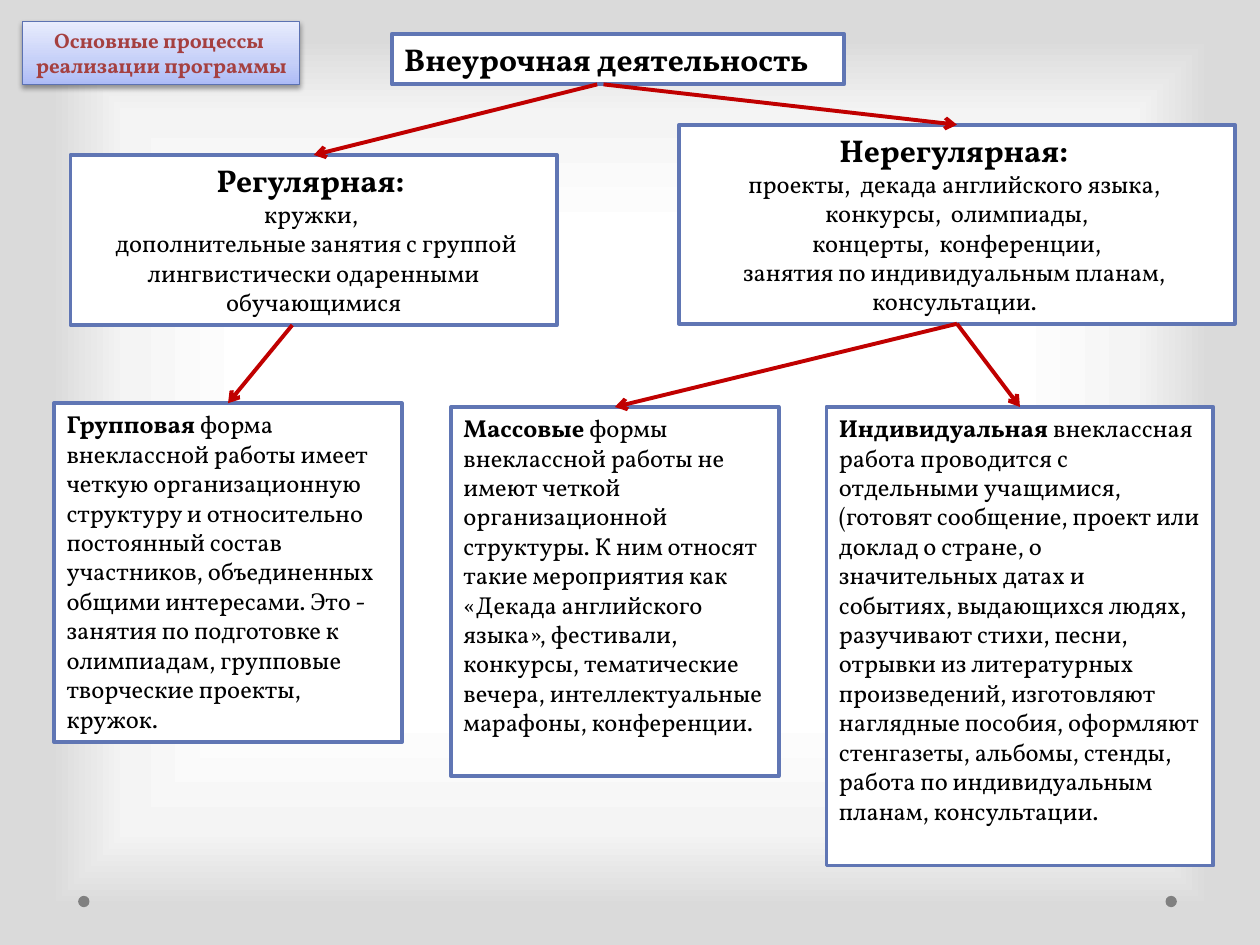
from pptx import Presentation
from pptx import util as u
from pptx.dml.color import RGBColor
from pptx.enum import shapes, text
from pptx.oxml import parse_xml
from pptx.oxml.ns import nsdecls, qn

# Grid of 100 columns and 75 rows
WIDTH, HEIGHT = u.Inches(10), u.Inches(7.5)
COLUMN, ROW = WIDTH / 100, HEIGHT / 75

FONT = "Vollkorn"
BLACK = RGBColor(0, 0, 0)
WHITE = RGBColor(255, 255, 255)
SILVER = RGBColor(0xF4, 0xF4, 0xF4)
ASH = RGBColor(0xDA, 0xDA, 0xDA)
GREY = RGBColor(0x80, 0x80, 0x80)
BLUE = RGBColor(0x60, 0x76, 0xB4)
LABEL_LINE = RGBColor(0x5C, 0x72, 0xB2)
LABEL_DARK = RGBColor(0xAD, 0xBB, 0xF6)
LABEL_MID = RGBColor(0xC5, 0xCF, 0xF8)
LABEL_LIGHT = RGBColor(0xE8, 0xEC, 0xFD)
LABEL_TEXT = RGBColor(0xA5, 0x40, 0x40)
RED = RGBColor(0xC0, 0, 0)

TOP, BOTTOM = 0, 2
LEFT, CENTER = text.PP_ALIGN.LEFT, text.PP_ALIGN.CENTER

# Each paragraph is a list of (wording, size, bold)
TITLE = [[("Внеурочная деятельность", 18, True)]]
LABEL = [[("Основные процессы ", 12, True)], [("реализации программы", 12, True)]]
REGULAR = [
    [("Регулярная: ", 18, True)],
    [("кружки, ", 14, False)],
    [(" дополнительные занятия с группой лингвистически одаренными обучающимися",
      14, False)],
]
IRREGULAR = [[("Нерегулярная: ", 18, True)]] + [
    [(line, 14, False)] for line in (
        "проекты,  декада английского языка, ",
        "конкурсы,  олимпиады,",
        " концерты,  конференции, ",
        "занятия по индивидуальным планам, ",
        "консультации. ",
    )
]
GROUP = [[
    ("Групповая", 14, True),
    (" форма внеклассной работы имеет четкую организационную структуру и "
     "относительно постоянный состав участников, объединенных общими "
     "интересами. Это - занятия по подготовке к олимпиадам, групповые "
     "творческие проекты, кружок.", 14, False),
]]
MASS = [[
    ("Массовые", 14, True),
    (" формы внеклассной работы не имеют четкой организационной структуры. "
     "К ним относят такие мероприятия как «Декада английского языка», "
     "фестивали, конкурсы, тематические вечера, интеллектуальные марафоны, "
     "конференции.", 14, False),
]]
INDIVIDUAL = [[
    ("Индивидуальная ", 14, True),
    ("внеклассная работа проводится с отдельными учащимися,(готовят "
     "сообщение, проект или доклад о стране, о значительных датах и событиях, "
     "выдающихся людях, разучивают стихи, песни, отрывки из литературных "
     "произведений, изготовляют наглядные пособия, оформляют стенгазеты, "
     "альбомы, стенды, работа по индивидуальным планам, консультации.",
     14, False),
]]


def set_gradient(fill, element, stops, direction):
    """Fill with (percent, colour) stops along an XML direction."""
    fill.gradient()
    marks = "".join(
        f'<a:gs pos="{percent * 1000}"><a:srgbClr val="{color}"/></a:gs>'
        for percent, color in stops)
    gradient = element.find(".//" + qn("a:gradFill"))
    gradient.getparent().replace(gradient, parse_xml(
        f'<a:gradFill {nsdecls("a")} rotWithShape="1">'
        f"<a:gsLst>{marks}</a:gsLst>{direction}</a:gradFill>"))


def add_shape(page, kind, column, row, columns, rows, color):
    shape = page.shapes.add_shape(
        kind, round(column * COLUMN), round(row * ROW),
        round(columns * COLUMN), round(rows * ROW))
    shape.shadow.inherit = False
    shape.fill.solid()
    shape.fill.fore_color.rgb = color
    return shape


def add_dot(page, column):
    dot = add_shape(page, shapes.MSO_SHAPE.OVAL, column, 71.1, 0.9, 0.9, GREY)
    dot.line.fill.background()


def add_box(page, place, paragraphs, align=LEFT, color=BLACK):
    box = add_shape(page, shapes.MSO_SHAPE.RECTANGLE, *place, WHITE)
    box.line.color.rgb = BLUE
    box.line.width = u.Pt(2.25)
    frame = box.text_frame
    frame.word_wrap = True
    frame.vertical_anchor = text.MSO_ANCHOR.TOP
    for index, spans in enumerate(paragraphs):
        para = frame.add_paragraph() if index else frame.paragraphs[0]
        para.alignment = align
        for wording, size, bold in spans:
            span = para.add_run()
            span.text = wording
            span.font.name = FONT
            span.font.size = u.Pt(size)
            span.font.bold = bold
            span.font.color.rgb = color
    return box


def add_label(page):
    label = add_box(page, (1.8, 1.7, 22, 5), LABEL, CENTER, LABEL_TEXT)
    label.line.color.rgb = LABEL_LINE
    label.line.width = u.Pt(0.75)
    set_gradient(label.fill, label._element.spPr,
                 [(0, LABEL_DARK), (35, LABEL_MID), (100, LABEL_LIGHT)],
                 '<a:lin ang="16200000" scaled="1"/>')
    # Soft shadow straight below
    label._element.spPr.find(qn("a:effectLst")).append(parse_xml(
        f'<a:outerShdw {nsdecls("a")} blurRad="{u.Pt(3.1)}" dist="{u.Pt(1.6)}" '
        'dir="5400000" rotWithShape="0"><a:srgbClr val="000000">'
        '<a:alpha val="38000"/></a:srgbClr></a:outerShdw>'))


def add_arrow(page, source, target, start=None):
    """Join two boxes; start is a column when not the source's middle."""
    arrow = page.shapes.add_connector(
        shapes.MSO_CONNECTOR.STRAIGHT,
        round((start or 0) * COLUMN), source.top + source.height,
        target.left + target.width // 2, target.top)
    if start is None:
        arrow.begin_connect(source, BOTTOM)
    arrow.end_connect(target, TOP)
    arrow.line.color.rgb = RED
    arrow.line.width = u.Pt(2.25)
    arrow.line._get_or_add_ln().append(
        parse_xml(f'<a:tailEnd {nsdecls("a")} type="arrow"/>'))
    arrow._element.spPr.append(parse_xml(f'<a:effectLst {nsdecls("a")}/>'))


def main():
    deck = Presentation()
    deck.slide_width, deck.slide_height = WIDTH, HEIGHT
    page = deck.slides.add_slide(deck.slide_layouts[6])

    # Background with its two dots
    set_gradient(page.background.fill, page._element,
                 [(50, WHITE), (76, SILVER), (92, ASH)],
                 '<a:path path="shape"><a:fillToRect l="50000" t="50000" '
                 'r="50000" b="50000"/></a:path>')
    for column in (92.5, 6.2):
        add_dot(page, column)

    # Boxes, level by level
    title = add_box(page, (31.1, 2.7, 35.9, 4), TITLE)
    regular = add_box(page, (5.6, 12.3, 38.6, 13.5), REGULAR, CENTER)
    irregular = add_box(page, (53.9, 9.9, 44.1, 15.8), IRREGULAR, CENTER)
    group = add_box(page, (4.3, 32, 27.6, 26.9), GROUP)
    mass = add_box(page, (35.8, 32.3, 26, 29.3), MASS)
    individual = add_box(page, (65.6, 32.3, 30.7, 36.4), INDIVIDUAL)

    # Arrows from each level to the next
    add_arrow(page, title, regular, 47.4)
    add_arrow(page, title, irregular, 47.9)
    add_arrow(page, regular, group, 23.2)
    add_arrow(page, irregular, mass)
    add_arrow(page, irregular, individual)

    add_label(page)
    deck.save("out.pptx")


if __name__ == "__main__":
    main()
